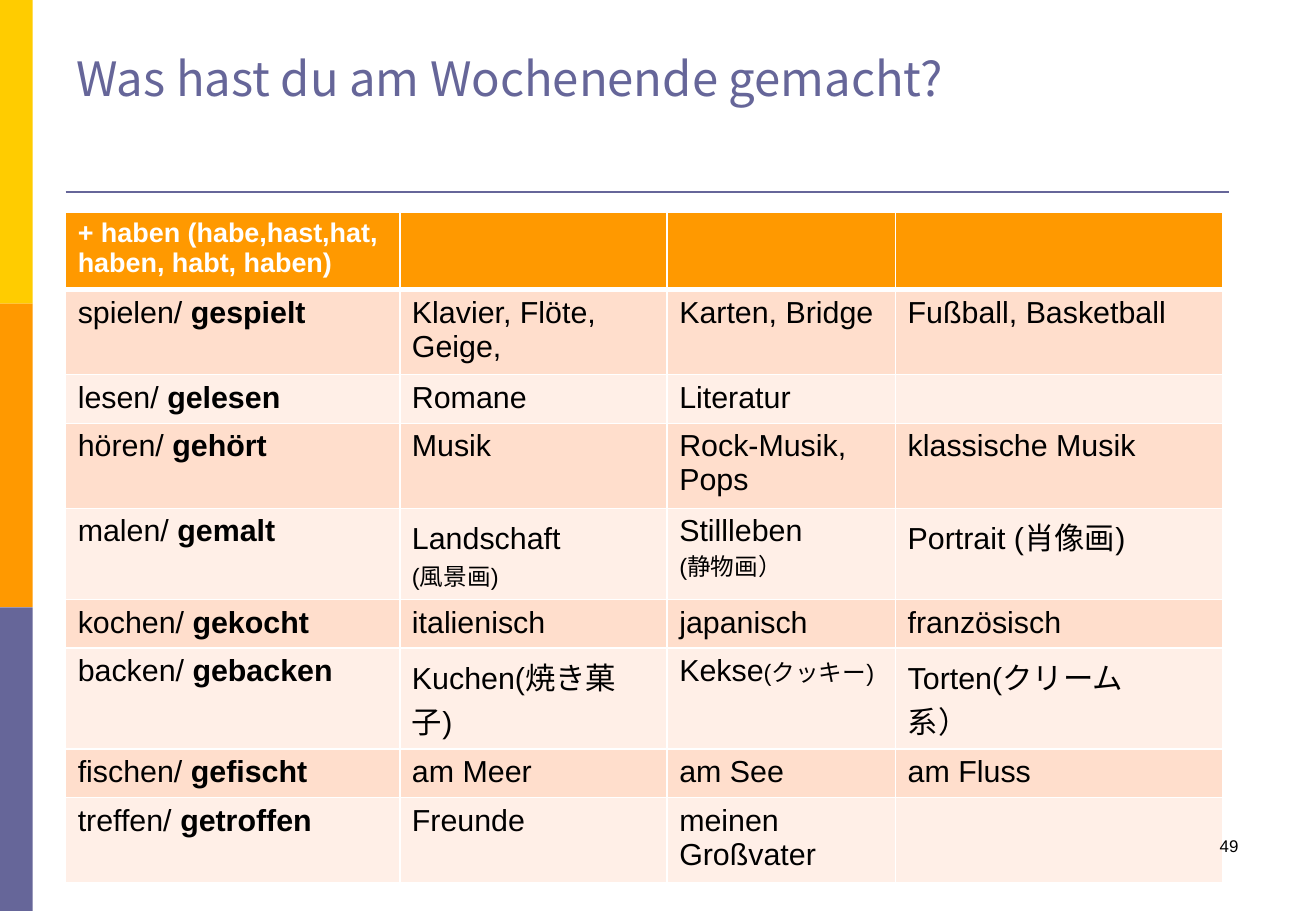
from lxml import etree
from pptx import Presentation, util as u
from pptx.dml.color import RGBColor
from pptx.enum import shapes, text
from pptx.oxml.ns import qn

WIDE, HIGH = 10.83, 7.5
YELLOW = RGBColor(0xFF, 0xCC, 0x00)
ORANGE = RGBColor(0xFF, 0x99, 0x00)
VIOLET = RGBColor(0x66, 0x66, 0x99)
PEACH = RGBColor(0xFF, 0xDE, 0xCC)
CREAM = RGBColor(0xFF, 0xEF, 0xE7)
WHITE = RGBColor(0xFF, 0xFF, 0xFF)
BLACK = RGBColor(0, 0, 0)

TITLE = "Was hast du am Wochenende gemacht?"
PAGE = "49"
# A bar starts the second style of a line: bold for verbs, small elsewhere.
ROWS = [
    ("+ haben (habe,hast,hat,\nhaben, habt, haben)", "", "", ""),
    ("spielen/ |gespielt", "Klavier, Flöte, Geige,", "Karten, Bridge", "Fußball, Basketball"),
    ("lesen/ |gelesen", "Romane", "Literatur", ""),
    ("hören/ |gehört", "Musik", "Rock-Musik, Pops", "klassische Musik"),
    ("malen/ |gemalt", "Landschaft　\n|(風景画)", "Stillleben\n|(静物画）", "Portrait (肖像画)"),
    ("kochen/ |gekocht", "italienisch", "japanisch", "französisch"),
    ("backen/ |gebacken", "Kuchen(焼き菓子)", "Kekse|(クッキー)", "Torten(クリーム系）　"),
    ("fischen/ |gefischt", "am Meer", "am See", "am Fluss"),
    ("treffen/ |getroffen", "Freunde", "meinen Großvater", ""),
]
COLS = (2.75, 2.2, 1.88, 2.69)
ONE, TWO = 0.4, 0.66  # heights of rows with one and two lines
HIGHS = (0.59, TWO, ONE, TWO, 0.75, ONE, 0.83, ONE, TWO)
LEFT, RULE_Y, TABLE_Y = 0.54, 1.58, 1.75
BAR = 0.27

BODY = dict(name="Arial", size=u.Pt(18), bold=False, color=BLACK)
HEAD = dict(BODY, size=u.Pt(16), bold=True, color=WHITE)
BOLD = dict(BODY, bold=True)
SMALL = dict(BODY, size=u.Pt(14))
TOP = dict(BODY, name="Noto Sans CJK JP", size=u.Pt(28), color=VIOLET)
FOOT = dict(BODY, size=u.Pt(10))


def style(font, form):
    for key, val in form.items():
        if key == "color":
            font.color.rgb = val
        else:
            setattr(font, key, val)


def write(frame, words, first, second=None):
    """Fill a frame: one paragraph per line, with the second style after a bar."""
    for i, line in enumerate(words.split("\n")):
        para = frame.add_paragraph() if i else frame.paragraphs[0]
        style(para.font, first)
        for part, form in zip(line.split("|"), (first, second)):
            if part:
                run = para.add_run()
                run.text = part
                style(run.font, form)


def label(slide, box, words, form, align, anchor):
    frame = slide.shapes.add_textbox(*map(u.Inches, box)).text_frame
    frame.word_wrap = True
    frame.vertical_anchor = anchor
    write(frame, words, form)
    frame.paragraphs[0].alignment = align


def edge(cell, sides):
    """Draw white cell borders; sides maps a tag to a width in points."""
    props = cell._tc.get_or_add_tcPr()
    for i, (tag, width) in enumerate(sides.items()):
        line = etree.Element(qn("a:" + tag), w=str(u.Pt(width)))
        fill = etree.SubElement(line, qn("a:solidFill"))
        etree.SubElement(fill, qn("a:srgbClr"), val=str(WHITE))
        props.insert(i, line)


def frame_page(slide):
    step = HIGH / 3
    for i, color in enumerate((YELLOW, ORANGE, VIOLET)):
        bar = slide.shapes.add_shape(
            shapes.MSO_SHAPE.RECTANGLE, 0, *map(u.Inches, (i * step, BAR, step)))
        bar.shadow.inherit = False
        bar.fill.solid()
        bar.fill.fore_color.rgb = color
        bar.line.fill.background()
    rule = slide.shapes.add_connector(
        shapes.MSO_CONNECTOR.STRAIGHT, *map(u.Inches, (LEFT, RULE_Y, 10.11, RULE_Y)))
    rule.line.color.rgb = VIOLET
    rule.line.width = u.Pt(1.5)
    etree.SubElement(rule._element.spPr, qn("a:effectLst"))


def verb_table(slide):
    box = (LEFT, TABLE_Y, sum(COLS), sum(HIGHS))
    table = slide.shapes.add_table(len(ROWS), len(COLS), *map(u.Inches, box)).table
    for col, width in zip(table.columns, COLS):
        col.width = u.Inches(width)
    for r, (row, high) in enumerate(zip(ROWS, HIGHS)):
        table.rows[r].height = u.Inches(high)
        color = (CREAM, PEACH)[r % 2] if r else ORANGE
        for c, words in enumerate(row):
            cell = table.cell(r, c)
            cell.fill.solid()
            cell.fill.fore_color.rgb = color
            write(cell.text_frame, words, BODY if r else HEAD, SMALL if c else BOLD)
            edge(cell, dict(lnL=1, lnR=1, lnT=3 if r == 1 else 1, lnB=1 if r else 3))


def main():
    deck = Presentation()
    deck.slide_width, deck.slide_height = u.Inches(WIDE), u.Inches(HIGH)
    slide = deck.slides.add_slide(deck.slide_layouts[6])
    frame_page(slide)
    label(slide, (0.53, 0.13, 9.75, 0.79), TITLE, TOP,
          text.PP_ALIGN.LEFT, text.MSO_ANCHOR.BOTTOM)
    verb_table(slide)
    label(slide, (7.76, 6.83, 2.53, 0.5), PAGE, FOOT,
          text.PP_ALIGN.RIGHT, text.MSO_ANCHOR.TOP)
    deck.save("out.pptx")


if __name__ == "__main__":
    main()
